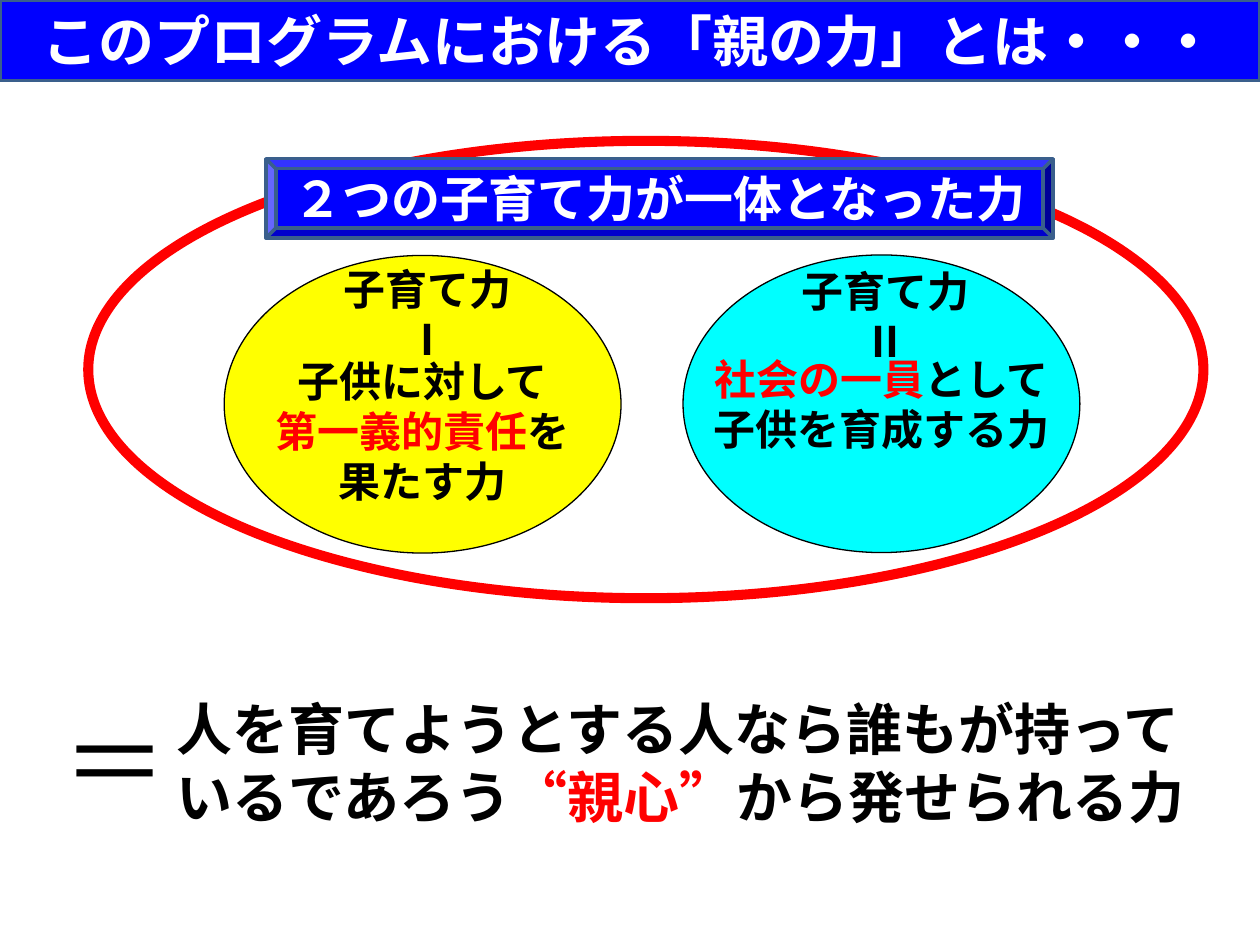
from lxml import etree
from pptx import Presentation
from pptx import util as u
from pptx.dml.color import RGBColor
from pptx.enum import shapes, text
from pptx.oxml import ns

BLACK = RGBColor(0, 0, 0)
WHITE = RGBColor(255, 255, 255)
RED = RGBColor(255, 0, 0)
BLUE = RGBColor(0, 0, 255)
YELLOW = RGBColor(255, 255, 0)
CYAN = RGBColor(0, 255, 255)
STEEL = RGBColor(0x3A, 0x5F, 0x8C)
FONT = "Noto Sans CJK JP"
OVAL = shapes.MSO_SHAPE.OVAL


class Deck:
    def __init__(self):
        self.prs = Presentation()
        self.prs.slide_width, self.prs.slide_height = u.Cm(25.4), u.Cm(19.05)
        self.s = self.prs.slides.add_slide(self.prs.slide_layouts[6])

    def shape(self, kind, box, fill, line, width):
        sp = self.s.shapes.add_shape(kind, *map(u.Cm, box))
        sp.shadow.inherit = False
        if fill is None:
            sp.fill.background()
        else:
            sp.fill.solid()
            sp.fill.fore_color.rgb = fill
        sp.line.color.rgb = line
        sp.line.width = u.Pt(width)
        return sp

    def add_lines(self, sp, lines, size, color=BLACK, bold=True, wrap=True,
                  align=text.PP_ALIGN.CENTER):
        tf = sp.text_frame
        tf.word_wrap = wrap
        tf.vertical_anchor = text.MSO_ANCHOR.MIDDLE
        for i, line in enumerate(lines):
            p = tf.add_paragraph() if i else tf.paragraphs[0]
            p.alignment = align
            for words, tint in line:
                r = p.add_run()
                r.text = words
                r.font.size = u.Pt(size)
                r.font.bold = bold
                r.font.color.rgb = tint or color
                r.font.name = FONT
                ea = etree.SubElement(r._r.get_or_add_rPr(), ns.qn("a:ea"))
                ea.set("typeface", FONT)
        return tf

    def label(self, box, lines, size, **style):
        sp = self.s.shapes.add_textbox(*map(u.Cm, box))
        return self.add_lines(sp, lines, size, **style)

    def banner(self, kind, box, words, size):
        sp = self.shape(kind, box, BLUE, STEEL, 2)
        return self.add_lines(sp, [[(words, None)]], size, color=WHITE)

    def power(self, left, top, fill, heading, heading_box, lines):
        sp = self.shape(OVAL, (left, top, 8, 6), fill, BLACK, 0.75)
        tf = self.add_lines(sp, lines, 24, wrap=False)
        self.label(heading_box, [[(heading, None)]], 24, wrap=False)
        return tf


def main():
    d = Deck()
    d.shape(OVAL, (1.78, 2.84, 22.48, 9.22), None, RED, 5.75)
    tf = d.power(4.52, 5.15, YELLOW, "子育て力Ⅰ", (6.4, 5.6, 4.45, 1.46), [
        [("子供に対して", None)],
        [("第一義的責任", RED), ("を", None)],
        [("果たす力", None)],
    ])
    tf.margin_top, tf.margin_bottom = u.Cm(1.07), 0
    d.power(13.77, 5.14, CYAN, "子育て力Ⅱ", (15.62, 5.63, 4.45, 1.46), [
        [("社会の一員", RED), ("として", None)],
        [("子供を育成する力", None)],
    ])
    d.label((3.3, 12.7, 21.26, 5.33), [[
        ("人を育てようとする人なら誰もが持っているであろう", None),
        ("“親心”", RED),
        ("から発せられる力", None),
    ]], 32, align=text.PP_ALIGN.LEFT)
    d.label((1.02, 14.05, 2.3, 2.54), [[("＝", None)]], 60, bold=False, wrap=False)
    d.banner(shapes.MSO_SHAPE.BEVEL, (5.36, 3.2, 15.87, 1.6),
             "２つの子育て力が一体となった力", 28)
    d.banner(shapes.MSO_SHAPE.RECTANGLE, (0, 0, 25.4, 1.62),
             "このプログラムにおける「親の力」とは・・・", 32)
    d.prs.save("out.pptx")


if __name__ == "__main__":
    main()
